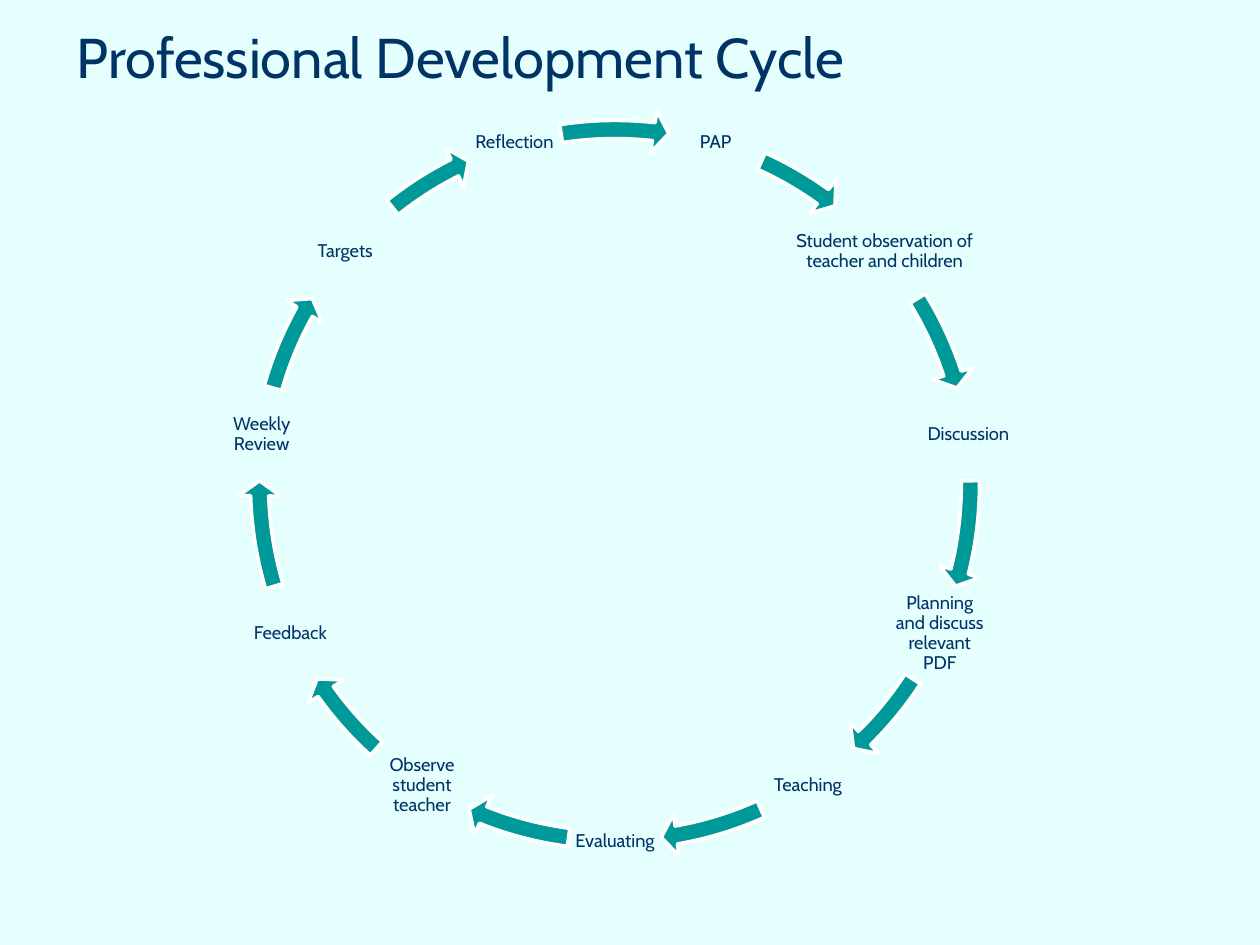
from dataclasses import dataclass
from math import cos, radians, sin

from pptx import Presentation
from pptx.dml.color import RGBColor as Rgb
from pptx.enum.shapes import MSO_SHAPE as Kind
from pptx.enum.text import MSO_ANCHOR as Anchor, MSO_AUTO_SIZE as Fit, PP_ALIGN as Align
from pptx.util import Emu, Pt

SCALE = 914400 / 126


@dataclass(frozen=True)
class Theme:
    font: str = "Cabin"
    back: str = "E5FFFF"
    ink: str = "003366"
    fill: str = "009999"
    edge: str = "FFFFFF"
    head: float = 32
    label: float = 10.5
    line: float = 2


def px(*nums):
    return [Emu(round(n * SCALE)) for n in nums]


def write(frame, text, *, theme, size, align=Align.LEFT, anchor=Anchor.TOP,
          inset=None, before=0, lines=1.0):
    frame.word_wrap = True
    frame.auto_size = Fit.NONE
    frame.vertical_anchor = anchor
    if inset is not None:
        pad = px(inset)[0]
        frame.margin_left = frame.margin_right = pad
        frame.margin_top = frame.margin_bottom = pad
    para = frame.paragraphs[0]
    para.alignment = align
    para.line_spacing = lines
    para.space_before = Pt(before)
    run = para.add_run()
    run.text = text
    run.font.name = theme.font
    run.font.size = Pt(size)
    run.font.color.rgb = Rgb.from_string(theme.ink)


class Deck:
    """Draws themed parts on the current slide."""

    def __init__(self, theme):
        self.theme = theme
        self.file = Presentation()
        self.file.slide_width, self.file.slide_height = px(1260, 945)

    def page(self):
        self.slide = self.file.slides.add_slide(self.file.slide_layouts[5])
        fill = self.slide.background.fill
        fill.solid()
        fill.fore_color.rgb = Rgb.from_string(self.theme.back)

    def title(self, text, *box):
        shape = self.slide.shapes.title
        shape.left, shape.top, shape.width, shape.height = px(*box)
        write(shape.text_frame, text, theme=self.theme, size=self.theme.head, before=3.6)

    def label(self, text, x, y, wide, high):
        box = self.slide.shapes.add_textbox(*px(x - wide / 2, y - high / 2, wide, high))
        write(box.text_frame, text, theme=self.theme, size=self.theme.label,
              align=Align.CENTER, anchor=Anchor.MIDDLE, inset=2, lines=0.9)

    def arrow(self, x, y, size, start, end):
        shape = self.slide.shapes.add_shape(
            Kind.CIRCULAR_ARROW, *px(x - size / 2, y - size / 2, size, size))
        turns = [angle * 0.6 for angle in (2.43, end, start)]
        for i, value in enumerate([0.024, *turns, 0.028]):
            shape.adjustments[i] = value
        shape.shadow.inherit = False
        shape.fill.solid()
        shape.fill.fore_color.rgb = Rgb.from_string(self.theme.fill)
        shape.line.color.rgb = Rgb.from_string(self.theme.edge)
        shape.line.width = Pt(self.theme.line)


MID = (615, 485)
RADIUS = 357
RING = 753
SIDE = 93
STEPS = [
    ("PAP", SIDE, 294.35, 305.81),
    ("Student observation of teacher and children", 2 * SIDE, 328.38, 341.74),
    ("Discussion", SIDE, 359.33, 14.12),
    ("Planning and discuss relevant PDF", SIDE, 33.09, 45.41),
    ("Teaching", SIDE, 65.79, 80.07),
    ("Evaluating", SIDE, 97.5, 111.78),
    ("Observe student teacher", SIDE, 132.16, 144.48),
    ("Feedback", SIDE, 163.45, 178.24),
    ("Weekly Review", SIDE, 195.83, 209.19),
    ("Targets", SIDE, 231.3, 243.22),
    ("Reflection", SIDE, 261.3, 276.27),
]


def main():
    deck = Deck(Theme())
    deck.page()
    deck.title("Professional Development Cycle", 64, 16, 1134, 863)
    for i, (text, wide, start, end) in enumerate(STEPS):
        turn = radians(360 / len(STEPS) * (i + 0.5))
        x = MID[0] + RADIUS * sin(turn)
        y = MID[1] - RADIUS * cos(turn)
        deck.label(text, x, y, wide, SIDE)
        deck.arrow(*MID, RING, start, end)
    deck.file.save("out.pptx")


if __name__ == "__main__":
    main()
